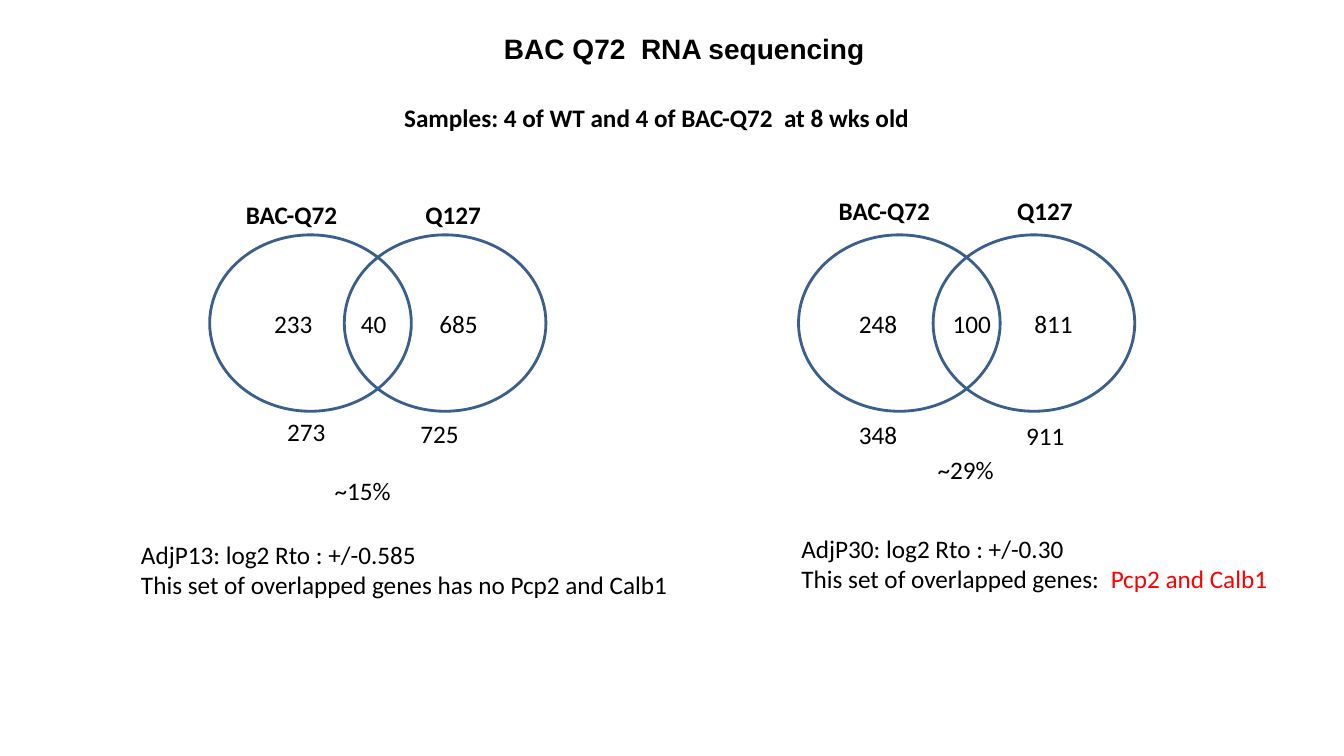
from dataclasses import dataclass

from pptx import Presentation
from pptx.dml.color import RGBColor as Color
from pptx.enum.shapes import MSO_SHAPE as Shape
from pptx.enum.text import MSO_AUTO_SIZE as Fit
from pptx.util import Inches, Pt


@dataclass(frozen=True)
class Theme:
    ink: Color = Color(0x00, 0x00, 0x00)
    ring: Color = Color(0x3A, 0x5F, 0x8C)
    alert: Color = Color(0xFF, 0x00, 0x00)
    head_font: str = "Arial"
    body_font: str = "Calibri"
    head_size: int = 20
    body_size: int = 18
    line: int = 2


THEME = Theme()
LINE_H = 0.4
RING_TOP, RING_W, RING_H = 2.33, 2, 1.75
RING_STEP = 1.335
COUNT_TOP = 3.01
# Box widths by kind of label
WIDE, SLIM, COUNT, PAIR, SHARE = 1.13, 0.76, 0.59, 0.46, 0.82


def style(run, bold=False, color=THEME.ink, font=THEME.body_font,
          size=THEME.body_size):
    run.font.name = font
    run.font.size = Pt(size)
    run.font.bold = bold
    run.font.color.rgb = color


def add_text(slide, box, text, **look):
    """Place one unwrapped text box; each line is a paragraph."""
    frame = slide.shapes.add_textbox(*map(Inches, box)).text_frame
    frame.word_wrap = False
    frame.auto_size = Fit.SHAPE_TO_FIT_TEXT
    frame.text = text
    for par in frame.paragraphs:
        for run in par.runs:
            style(run, **look)
    return frame


def add_ring(slide, left):
    ring = slide.shapes.add_shape(
        Shape.OVAL, Inches(left), Inches(RING_TOP),
        Inches(RING_W), Inches(RING_H))
    ring.shadow.inherit = False
    ring.fill.background()
    ring.line.color.rgb = THEME.ring
    ring.line.width = Pt(THEME.line)


def add_venn(slide, left, heads, labels):
    """Draw two rings with their headings, counts and overlap share."""
    for step in range(2):
        add_ring(slide, left + step * RING_STEP)
    for text, x, y, width in heads:
        add_text(slide, (x, y, width, LINE_H), text, bold=True)
    for text, x, y, width in labels:
        add_text(slide, (x, y, width, LINE_H), text)


def main():
    deck = Presentation()
    deck.slide_width, deck.slide_height = Inches(13.33), Inches(7.5)
    slide = deck.slides.add_slide(deck.slide_layouts[6])

    # Title and samples
    add_text(slide, (4.9, 0.26, 3.89, 0.44), "BAC Q72  RNA sequencing",
             bold=True, font=THEME.head_font, size=THEME.head_size)
    add_text(slide, (3.91, 0.97, 5.28, LINE_H),
             "Samples: 4 of WT and 4 of BAC-Q72  at 8 wks old", bold=True)

    # Strict cutoff
    add_venn(slide, 2.08,
             [("BAC-Q72", 2.34, 1.93, WIDE), ("Q127", 4.12, 1.93, SLIM)],
             [("233", 2.62, COUNT_TOP, COUNT),
              ("40", 3.48, COUNT_TOP, PAIR),
              ("685", 4.26, COUNT_TOP, COUNT),
              ("273", 2.75, 4.08, COUNT),
              ("725", 4.07, 4.1, COUNT),
              ("~15%", 3.22, 4.67, SHARE)])
    add_text(slide, (1.3, 5.3, 5.55, 0.71),
             "AdjP13: log2 Rto : +/-0.585\n"
             "This set of overlapped genes has no Pcp2 and Calb1")

    # Loose cutoff
    add_venn(slide, 7.92,
             [("BAC-Q72", 8.22, 1.89, WIDE), ("Q127", 9.99, 1.89, SLIM)],
             [("248", 8.42, COUNT_TOP, COUNT),
              ("100", 9.35, COUNT_TOP, COUNT),
              ("811", 10.16, COUNT_TOP, COUNT),
              ("348", 8.42, 4.11, COUNT),
              ("911", 10.08, 4.12, COUNT),
              ("~29%", 9.2, 4.46, SHARE)])
    note = add_text(slide, (7.85, 5.24, 4.94, 1.01),
                    "AdjP30: log2 Rto : +/-0.30\n"
                    "This set of overlapped genes:  ")
    genes = note.paragraphs[-1].add_run()
    genes.text = "Pcp2 and Calb1"
    style(genes, color=THEME.alert)

    deck.save("out.pptx")


if __name__ == "__main__":
    main()
